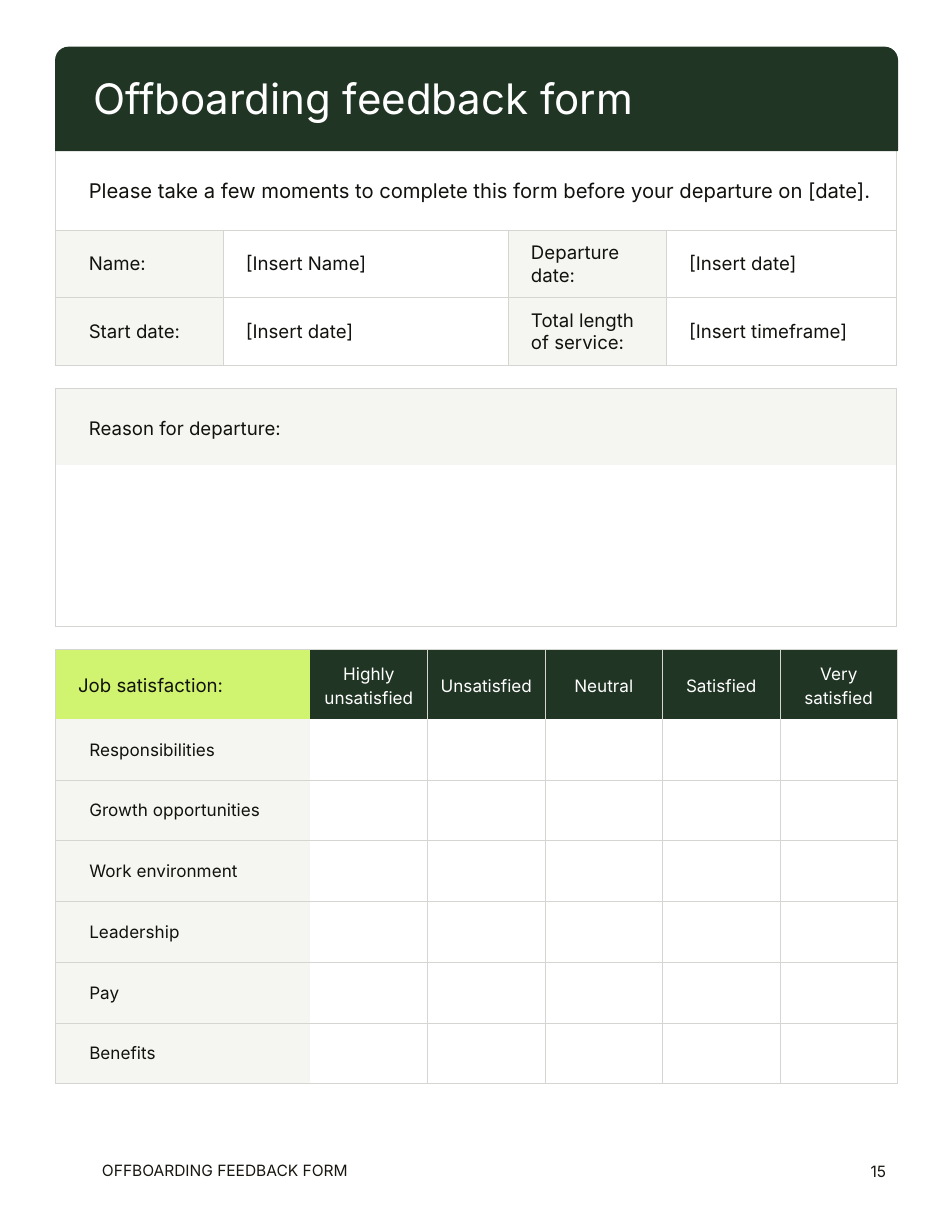
from lxml.etree import SubElement
from pptx import Presentation
from pptx.dml.color import RGBColor
from pptx.enum.shapes import MSO_SHAPE as Preset
from pptx.enum.text import MSO_ANCHOR as Anchor, MSO_AUTO_SIZE as AutoSize, PP_ALIGN as Align
from pptx.oxml.ns import qn
from pptx.table import _Cell as Cell
from pptx.util import Pt

FONT = "Inter"
INK, FOOTER_INK, WHITE = "11110D", "181610", "FFFFFF"
GREEN, LIME, PALE, RULE = "203524", "D1F470", "F5F5F2", "D5D5D2"
LINE_WIDTH = 0.75
FRAME_SIZE = 236

DETAILS = [
    ["Name:", "[Insert Name]", "Departure date:", "[Insert date]"],
    ["Start date:", "[Insert date]", "Total length of service:", "[Insert timeframe]"],
]
RATINGS = ["Highly unsatisfied", "Unsatisfied", "Neutral", "Satisfied", "Very satisfied"]
TOPICS = ["Responsibilities", "Growth opportunities", "Work environment",
          "Leadership", "Pay", "Benefits"]


def color(value):
    return RGBColor.from_string(value)


def write(holder, text, size=12, ink=INK, align=Align.LEFT, anchor=Anchor.MIDDLE,
          margins=(7.2, 7.2, 7.2, 7.2), spacing=1):
    frame = holder.text_frame
    box = holder if isinstance(holder, Cell) else frame
    if box is frame:
        frame.word_wrap = True
        frame.auto_size = AutoSize.NONE
    box.vertical_anchor = anchor
    box.margin_left, box.margin_top, box.margin_right, box.margin_bottom = map(Pt, margins)
    paragraph = frame.paragraphs[0]
    paragraph.alignment = align
    paragraph.line_spacing = spacing
    run = paragraph.add_run()
    run.text = text
    run.font.name = FONT
    run.font.size = Pt(size)
    run.font.color.rgb = color(ink)


def add_box(slide, preset, box, line, fill=None):
    shape = slide.shapes.add_shape(preset, *map(Pt, box))
    shape.shadow.inherit = False
    if fill:
        shape.fill.solid()
        shape.fill.fore_color.rgb = color(fill)
    else:
        shape.fill.background()
    shape.line.color.rgb = color(line)
    shape.line.width = Pt(LINE_WIDTH)
    return shape


def add_grid(slide, left, top, widths, heights):
    frame = slide.shapes.add_table(len(heights), len(widths), Pt(left), Pt(top),
                                   Pt(sum(widths)), Pt(sum(heights)))
    table = frame.table
    table.first_row = table.horz_banding = False
    for column, width in zip(table.columns, widths):
        column.width = Pt(width)
    for row, height in zip(table.rows, heights):
        row.height = Pt(height)
    frame.width = frame.height = Pt(FRAME_SIZE)
    return table


def style_cell(cell, sides="LRTB", fill=None):
    properties = cell._tc.get_or_add_tcPr()
    for side in "LRTB":
        border = SubElement(properties, qn(f"a:ln{side}"), w=str(Pt(LINE_WIDTH)))
        if side in sides:
            solid = SubElement(border, qn("a:solidFill"))
            SubElement(solid, qn("a:srgbClr"), val=RULE)
        else:
            SubElement(border, qn("a:noFill"))
    if fill:
        cell.fill.solid()
        cell.fill.fore_color.rgb = color(fill)
    else:
        cell.fill.background()


def add_header(slide, left, top, width, height):
    box = (left, top, width, height)
    band = add_box(slide, Preset.ROUND_2_SAME_RECTANGLE, box, GREEN, fill=GREEN)
    band.adjustments[0] = 0.125
    title = slide.shapes.title
    title.left, title.top, title.width, title.height = map(Pt, box)
    band._element.addnext(title._element)
    write(title, "Offboarding feedback form", size=27, ink=WHITE, spacing=0.8,
          margins=(24, 11, 7.2, 7.2))


def add_introduction(slide, left, top, width, height):
    shape = add_box(slide, Preset.RECTANGLE, (left, top, width, height), RULE)
    write(shape, "Please take a few moments to complete this form "
          "before your departure on [date].", size=13, margins=(21.6, 0, 0, 0))


def add_details(slide, left, top, width, height):
    widths = [width * share for share in (0.2, 0.339, 0.188, 0.273)]
    table = add_grid(slide, left, top, widths, [height / 2] * 2)
    for row, texts in enumerate(DETAILS):
        for column, text in enumerate(texts):
            cell = table.cell(row, column)
            style_cell(cell, fill=PALE if column % 2 == 0 else None)
            indent = 21.6 if column == 0 else 14.4
            write(cell, text, margins=(indent, 7.2, 14.4, 7.2))


def add_reason(slide, left, top, width, height):
    heading = 49.5
    table = add_grid(slide, left, top, [width], [heading, height - heading])
    style_cell(table.cell(0, 0), "LRT", PALE)
    write(table.cell(0, 0), "Reason for departure:", spacing=1.15,
          margins=(21.6, 14.4, 14.4, 14.4))
    style_cell(table.cell(1, 0), "LRB")


def add_satisfaction(slide, left, top, width, height):
    label_width, heading = 163.6, 44.6
    rating_width = (width - label_width) / len(RATINGS)
    topic_height = (height - heading) / len(TOPICS)
    table = add_grid(slide, left, top,
                     [label_width] + [rating_width] * len(RATINGS),
                     [heading] + [topic_height] * len(TOPICS))

    style_cell(table.cell(0, 0), "LT", LIME)
    write(table.cell(0, 0), "Job satisfaction:", spacing=1.15, margins=(14.4, 7.2, 0, 7.2))
    for column, rating in enumerate(RATINGS, 1):
        cell = table.cell(0, column)
        style_cell(cell, "RT" if column == 1 else "LRT", GREEN)
        write(cell, rating, size=11, ink=WHITE, align=Align.CENTER, spacing=1.15)

    for row, topic in enumerate(TOPICS, 1):
        upper = "" if row == 1 else "T"
        label = table.cell(row, 0)
        style_cell(label, "LB" + upper, PALE)
        write(label, topic, size=11, margins=(21.6, 7.2, 21.6, 7.2))
        for column in range(1, len(RATINGS) + 1):
            left_side = "" if column == 1 else "L"
            style_cell(table.cell(row, column), left_side + "RB" + upper)


def add_footer(slide, left, top, width, height):
    number_width = 30
    name = slide.shapes.add_textbox(Pt(left), Pt(top + 11.4), Pt(236), Pt(26.5))
    write(name, "OFFBOARDING FEEDBACK FORM", size=10, ink=FOOTER_INK, anchor=Anchor.TOP)
    number = slide.shapes.add_textbox(Pt(left + width - number_width), Pt(top),
                                      Pt(number_width), Pt(height))
    write(number, "15", size=10, ink=FOOTER_INK, align=Align.RIGHT)


def main():
    presentation = Presentation()
    presentation.slide_width, presentation.slide_height = Pt(612), Pt(792)
    slide = presentation.slides.add_slide(presentation.slide_layouts[5])
    left, width = 35.5, 540.8
    add_footer(slide, 58.5, 727.4, 518.2, 51)
    add_introduction(slide, left, 97, width, 51)
    add_details(slide, left, 147.9, width, 86)
    add_reason(slide, left, 249.7, width, 153.3)
    add_satisfaction(slide, 35.8, 417.4, 541.2, 279)
    add_header(slide, 35.8, 30.4, 541.2, 66.5)
    presentation.save("out.pptx")


if __name__ == "__main__":
    main()
